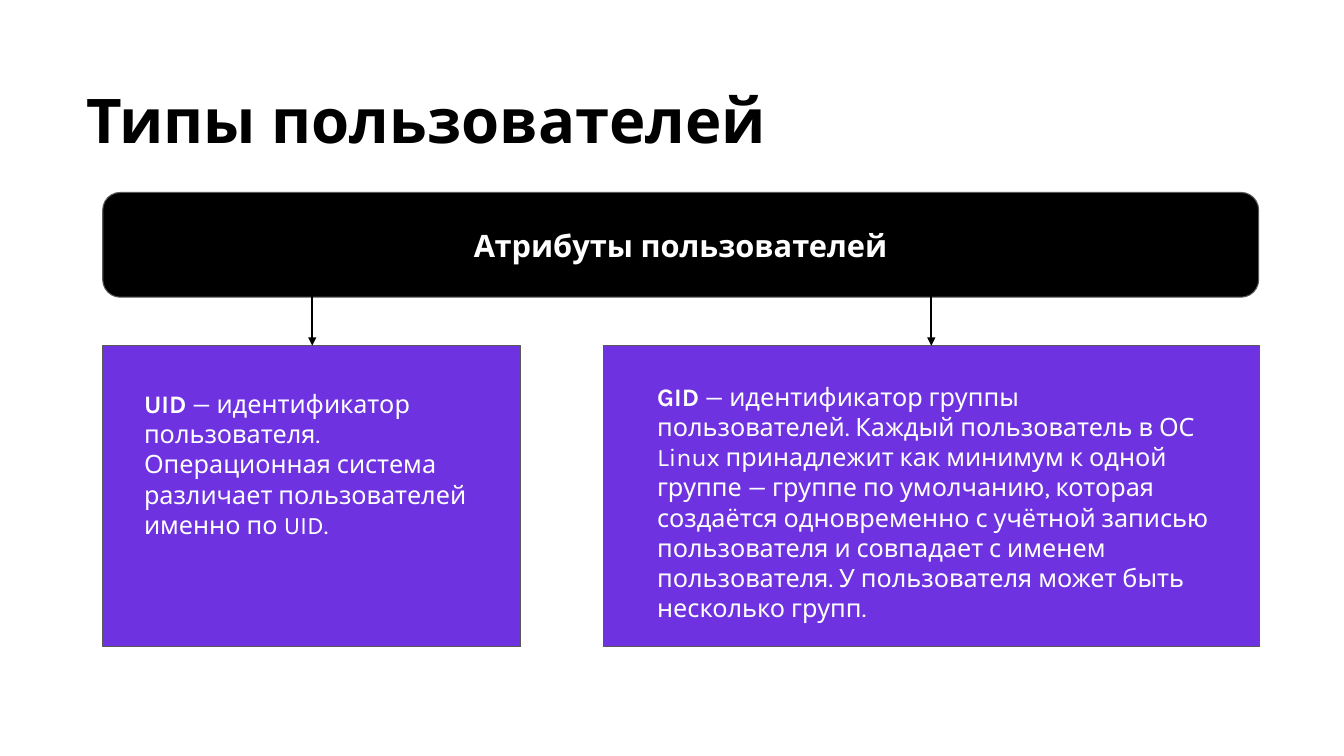
from lxml.etree import SubElement
from pptx import Presentation
from pptx.dml.color import RGBColor
from pptx.enum.shapes import MSO_CONNECTOR, MSO_SHAPE
from pptx.enum.text import MSO_ANCHOR, PP_ALIGN
from pptx.oxml.ns import qn
from pptx.util import Cm, Pt

COLORS = {"black": "000000", "white": "FFFFFF", "gray": "595959", "violet": "6E32E0"}


def style(run, size, color, bold):
    font = run.font
    font.name, font.size, font.bold = "Karla", Pt(size), bold
    font.color.rgb = RGBColor.from_string(COLORS[color])


def block(kind, left, top, width, height, fill):
    shape = slide.shapes.add_shape(kind, Cm(left), Cm(top), Cm(width), Cm(height))
    shape.shadow.inherit = False
    shape.fill.solid()
    shape.fill.fore_color.rgb = RGBColor.from_string(COLORS[fill])
    shape.line.color.rgb = RGBColor.from_string(COLORS["gray"])
    shape.line.width = Pt(0.75)
    return shape


deck = Presentation()
deck.slide_width, deck.slide_height = Cm(33.87), Cm(19.05)
slide = deck.slides.add_slide(deck.slide_layouts[5])

title = slide.shapes.title
title.left, title.top, title.width, title.height = Cm(1.93), Cm(1.93), Cm(29.95), Cm(2.64)
title.text_frame.text = "Типы пользователей"
title.text_frame.vertical_anchor = MSO_ANCHOR.TOP
head = title.text_frame.paragraphs[0]
head.alignment = PP_ALIGN.LEFT
style(head.runs[0], 44, "black", True)

banner = block(MSO_SHAPE.ROUNDED_RECTANGLE, 2.59, 4.85, 29.13, 2.64, "black")
banner.text_frame.text = "Атрибуты пользователей"
banner.text_frame.vertical_anchor = MSO_ANCHOR.MIDDLE
label = banner.text_frame.paragraphs[0]
label.alignment = PP_ALIGN.CENTER
style(label.runs[0], 22, "white", True)

cards = [
    (2.59, 10.54, 7.87, (3.38, 9.53, 8.97, 4.93), "UID",
     " — идентификатор пользователя. Операционная система различает "
     "пользователей именно по UID."),
    (15.21, 16.54, 23.47, (16.31, 9.35, 14.48, 5.69), "GID",
     " — идентификатор группы пользователей. Каждый пользователь в ОС Linux "
     "принадлежит как минимум к одной группе — группе по умолчанию, которая "
     "создаётся одновременно с учётной записью пользователя и совпадает с именем "
     "пользователя. У пользователя может быть несколько групп."),
]
for left, width, mid, area, term, text in cards:
    block(MSO_SHAPE.RECTANGLE, left, 8.71, width, 7.59, "violet")

    arrow = slide.shapes.add_connector(
        MSO_CONNECTOR.STRAIGHT, Cm(mid), Cm(7.4), Cm(mid), Cm(8.71))
    arrow.line.color.rgb = RGBColor.from_string(COLORS["black"])
    arrow.line.width = Pt(1.5)
    SubElement(arrow.line._get_or_add_ln(), qn("a:tailEnd"), type="triangle")
    SubElement(arrow._element.spPr, qn("a:effectLst"))

    note = slide.shapes.add_textbox(*map(Cm, area))
    frame = note.text_frame
    frame.word_wrap = True
    frame.margin_left = frame.margin_right = Cm(0.25)
    frame.margin_top = frame.margin_bottom = Cm(0.25)
    for part, bold in ((term, True), (text, False)):
        run = frame.paragraphs[0].add_run()
        run.text = part
        style(run, 18, "white", bold)

deck.save("out.pptx")
